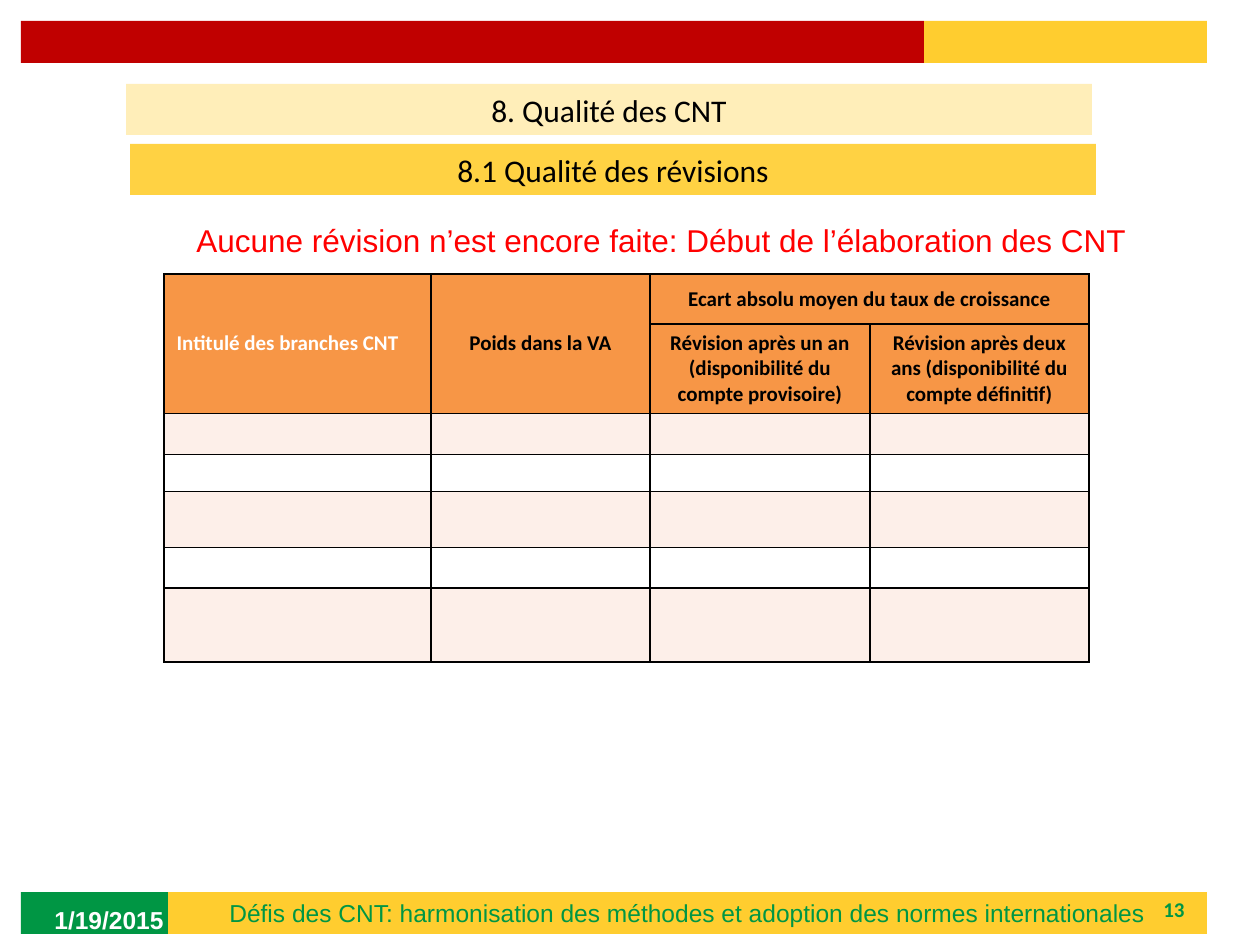
from lxml.etree import SubElement
from pptx import Presentation
from pptx.dml.color import RGBColor
from pptx.enum.shapes import MSO_SHAPE as SHAPE
from pptx.enum.text import MSO_ANCHOR as ANCHOR, PP_ALIGN as ALIGN
from pptx.oxml import parse_xml
from pptx.oxml.ns import nsdecls, qn
from pptx.util import Pt

COLORS = {"green": "009644", "yellow": "FFCD2F", "red": "C00000", "cream": "FFEEB9",
          "gold": "FFD243", "orange": "F79646", "pink": "FDEFE9", "white": "FFFFFF",
          "black": "000000", "alert": "FF0000"}
LEFT, CENTER, RIGHT = ALIGN.LEFT, ALIGN.CENTER, ALIGN.RIGHT

BARS = [
    ((21, 892, 147, 42), "green", None),
    ((168, 892, 1039, 42), "yellow",
     ("Défis des CNT: harmonisation des méthodes et adoption des normes internationales",
      14, "Arial", "green", False, CENTER)),
    ((21, 21, 903, 42), "red", None),
    ((924, 21, 283, 42), "yellow", None),
    ((126, 84, 966, 51), "cream",
     ("8. Qualité des CNT", 18, "Calibri", "black", False, CENTER)),
    ((130, 144, 966, 51), "gold",
     ("8.1 Qualité des révisions", 18, "Calibri", "black", False, CENTER)),
]
LABELS = [
    ((903, 892, 294, 34), ("13", 12, "Calibri", "green", True, RIGHT)),
    ((42, 895, 294, 50), ("1/19/2015", 14, "Arial", "white", True, LEFT)),
    ((184, 214, 983, 51),
     ("Aucune révision n’est encore faite: Début de l’élaboration des CNT",
      18, "Arial", "alert", False, LEFT)),
]
TABLE_AT = (164, 274)
COLS = [267, 219, 220, 219]
ROWS = [50, 89, 41, 37, 56, 41, 74]
HEADER_ROWS = 2
MERGES = [((0, 0), (1, 0)), ((0, 1), (1, 1)), ((0, 2), (0, 3))]
HEADERS = {
    (0, 0): ("Intitulé des branches CNT", "white", LEFT),
    (0, 1): ("Poids dans la VA", "black", CENTER),
    (0, 2): ("Ecart absolu moyen du taux de croissance", "black", CENTER),
    (1, 2): ("Révision après un an (disponibilité du compte provisoire)", "black", CENTER),
    (1, 3): ("Révision après deux ans (disponibilité du compte définitif)", "black", CENTER),
}


def px(n):
    return round(n * 914400 / 126)


def rgb(name):
    return RGBColor.from_string(COLORS[name])


def write(tf, text, size, font, color, bold, align):
    p = tf.paragraphs[0]
    p.text = text
    p.alignment = align
    p.font.size, p.font.name, p.font.bold = Pt(size), font, bold
    p.font.color.rgb = rgb(color)


def write_box(sp, label):
    tf = sp.text_frame
    tf.word_wrap = True
    tf.vertical_anchor = ANCHOR.MIDDLE
    write(tf, *label)


def add_bar(s, box, fill, label):
    sp = s.shapes.add_shape(SHAPE.RECTANGLE, *map(px, box))
    sp.shadow.inherit = False
    sp.fill.solid()
    sp.fill.fore_color.rgb = rgb(fill)
    sp.line.fill.background()
    if label:
        write_box(sp, label)


def set_borders(cell):
    tc_pr = cell._tc.get_or_add_tcPr()
    for i, side in enumerate("LRTB"):
        ln = parse_xml(f'<a:ln{side} {nsdecls("a")} w="12700"/>')
        fill = SubElement(ln, qn("a:solidFill"))
        SubElement(fill, qn("a:srgbClr"), val=COLORS["black"])
        tc_pr.insert(i, ln)


def add_table(s):
    table = s.shapes.add_table(len(ROWS), len(COLS), *map(px, TABLE_AT),
                               px(sum(COLS)), px(sum(ROWS))).table
    for col, width in zip(table.columns, COLS):
        col.width = px(width)
    for r, height in enumerate(ROWS):
        table.rows[r].height = px(height)
        for c in range(len(COLS)):
            cell = table.cell(r, c)
            cell.fill.solid()
            body = "white" if r % 2 else "pink"
            cell.fill.fore_color.rgb = rgb("orange" if r < HEADER_ROWS else body)
            set_borders(cell)
            cell.vertical_anchor = ANCHOR.MIDDLE
            if (r, c) in HEADERS:
                text, color, align = HEADERS[r, c]
                write(cell.text_frame, text, 12, "Calibri", color, True, align)
            else:
                cell.margin_top = cell.margin_bottom = 0
                cell.text_frame.paragraphs[0].font.size = Pt(12)
    for first, last in MERGES:
        table.cell(*first).merge(table.cell(*last))


def main():
    prs = Presentation()
    prs.slide_width, prs.slide_height = px(1260), px(945)
    s = prs.slides.add_slide(prs.slide_layouts[6])
    for bar in BARS:
        add_bar(s, *bar)
    add_table(s)
    for box, label in LABELS:
        write_box(s.shapes.add_textbox(*map(px, box)), label)
    prs.save("out.pptx")


if __name__ == "__main__":
    main()
